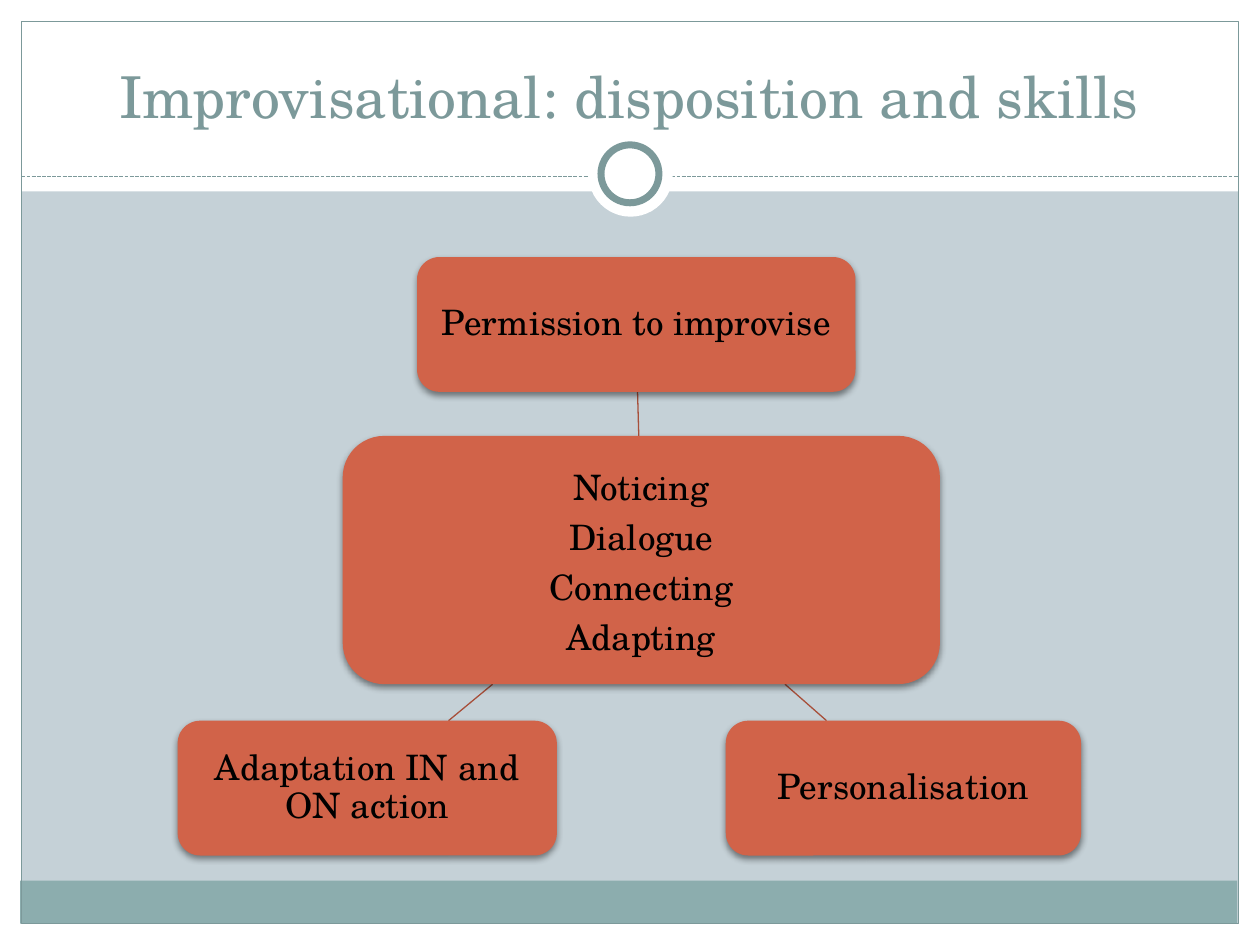
import lxml.etree
import pptx
import pptx.dml.color
import pptx.enum.dml
import pptx.enum.shapes
import pptx.enum.text
import pptx.oxml
import pptx.oxml.ns
import pptx.util

COLOURS = {
    "background": "C5D1D7",
    "paper": "FFFFFF",
    "footer": "8CADAE",
    "accent": "7C999A",
    "box": "D16349",
    "link": "A74F3A",
    "ink": "000000",
}
SHAPES = pptx.enum.shapes.MSO_SHAPE
ANCHORS = pptx.enum.text.MSO_ANCHOR


def colour(name):
    """Return the named colour."""
    return pptx.dml.color.RGBColor.from_string(COLOURS[name])


def apply(target, values):
    """Set each attribute in values on the target."""
    for name, value in values.items():
        setattr(target, name, value)


class Deck:
    """Hold the style and the current slide."""

    font = "TeX Gyre Schola"
    paragraph = {
        "alignment": pptx.enum.text.PP_ALIGN.CENTER,
        "line_spacing": 0.9,
        "space_after": pptx.util.Pt(7),
    }

    def __init__(self, width, height):
        """Start a presentation with one title-only slide."""
        self.presentation = pptx.Presentation()
        apply(self.presentation, {
            "slide_width": pptx.util.Inches(width),
            "slide_height": pptx.util.Inches(height),
        })
        self.slide = self.presentation.slides.add_slide(self.presentation.slide_layouts[5])
        background = self.slide.background.fill
        background.solid()
        background.fore_color.rgb = colour("background")

    def outline(self, line, name, width):
        """Give a line its colour and width."""
        line.color.rgb = colour(name)
        line.width = pptx.util.Pt(width)

    def fill_text(self, frame, lines, size, ink, inset, anchor, layout):
        """Fill a text frame with one paragraph per line."""
        apply(frame, {"text": "\n".join(lines), "word_wrap": True, "vertical_anchor": anchor,
                      "auto_size": pptx.enum.text.MSO_AUTO_SIZE.NONE})
        for side in ("left", "top", "right", "bottom"):
            setattr(frame, f"margin_{side}", pptx.util.Inches(inset))
        for paragraph in frame.paragraphs:
            apply(paragraph, layout)
            apply(paragraph.font, {"name": self.font, "size": pptx.util.Pt(size), "bold": False})
            paragraph.font.color.rgb = colour(ink)

    def title(self, text, place):
        """Place the title above the backdrop."""
        heading = self.slide.shapes.title
        heading.element.getparent().append(heading.element)
        apply(heading, dict(zip(("left", "top", "width", "height"), map(pptx.util.Inches, place))))
        self.fill_text(heading.text_frame, [text], 33, "accent", 0.05, ANCHORS.BOTTOM,
                       {"alignment": pptx.enum.text.PP_ALIGN.CENTER})

    def shape(self, kind, place, fill=None, edge=None, edge_width=0.75):
        """Add a flat preset shape."""
        shape = self.slide.shapes.add_shape(kind, *map(pptx.util.Inches, place))
        shape.shadow.inherit = False
        if fill:
            shape.fill.solid()
            shape.fill.fore_color.rgb = colour(fill)
        else:
            shape.fill.background()
        if edge:
            self.outline(shape.line, edge, edge_width)
        else:
            shape.line.fill.background()
        return shape

    def box(self, lines, place, inset=0.06, top=0.06):
        """Add a rounded box with text and a soft shadow."""
        box = self.shape(SHAPES.ROUNDED_RECTANGLE, place, "box")
        effects = box.element.spPr.find(pptx.oxml.ns.qn("a:effectLst"))
        effects.append(pptx.oxml.parse_xml(
            f'<a:outerShdw {pptx.oxml.ns.nsdecls("a")} blurRad="50800" dist="25400" '
            f'dir="5400000" rotWithShape="0"><a:srgbClr val="{COLOURS["ink"]}">'
            '<a:alpha val="45000"/></a:srgbClr></a:outerShdw>'))
        self.fill_text(box.text_frame, lines, 20, "ink", inset, ANCHORS.MIDDLE, self.paragraph)
        box.text_frame.margin_top = pptx.util.Inches(top)

    def line(self, start, end, name, dash=None):
        """Add a thin straight line."""
        line = self.slide.shapes.add_connector(
            pptx.enum.shapes.MSO_CONNECTOR.STRAIGHT, *map(pptx.util.Inches, start + end))
        self.outline(line.line, name, 0.75)
        line.line.dash_style = dash
        lxml.etree.SubElement(line.element.spPr, pptx.oxml.ns.qn("a:effectLst"))

    def backdrop(self):
        """Draw the white frame, footer band, divider and ring."""
        for place in ((0, 7.33, 10, 0.17), (0, 0, 10, 1.52),
                      (0, 0, 0.17, 7.5), (9.83, 0, 0.17, 7.5)):
            self.shape(SHAPES.RECTANGLE, place, "paper")
        self.shape(SHAPES.RECTANGLE, (0.16, 6.99, 9.66, 0.34), "footer")
        self.shape(SHAPES.RECTANGLE, (0.17, 0.17, 9.66, 7.16), edge="accent")
        self.line((0.17, 1.4), (9.83, 1.4), "accent", pptx.enum.dml.MSO_LINE.SQUARE_DOT)
        self.shape(SHAPES.OVAL, (4.67, 1.05, 0.67, 0.67), "paper")
        self.shape(SHAPES.OVAL, (4.77, 1.15, 0.46, 0.46), "paper", "accent", 4)


def main():
    """Build and save the slide."""
    deck = Deck(10, 7.5)
    deck.backdrop()
    deck.title("Improvisational: disposition and skills", (0.33, 0.25, 9.33, 0.83))
    for start, end in (((5.07, 3.46), (5.06, 3.11)),
                       ((6.23, 5.43), (6.56, 5.72)),
                       ((3.91, 5.43), (3.56, 5.72))):
        deck.line(start, end, "link")
    deck.box(["Noticing", "Dialogue", "Connecting", "Adapting"],
             (2.72, 3.46, 4.74, 1.97), inset=0.03, top=0.1)
    for text, left, top, width in (("Permission to improvise", 3.31, 2.04, 3.48),
                                   ("Personalisation", 5.76, 5.72, 2.82),
                                   ("Adaptation IN and ON action", 1.41, 5.72, 3.01)):
        deck.box([text], (left, top, width, 1.07))
    deck.presentation.save("out.pptx")


if __name__ == "__main__":
    main()
